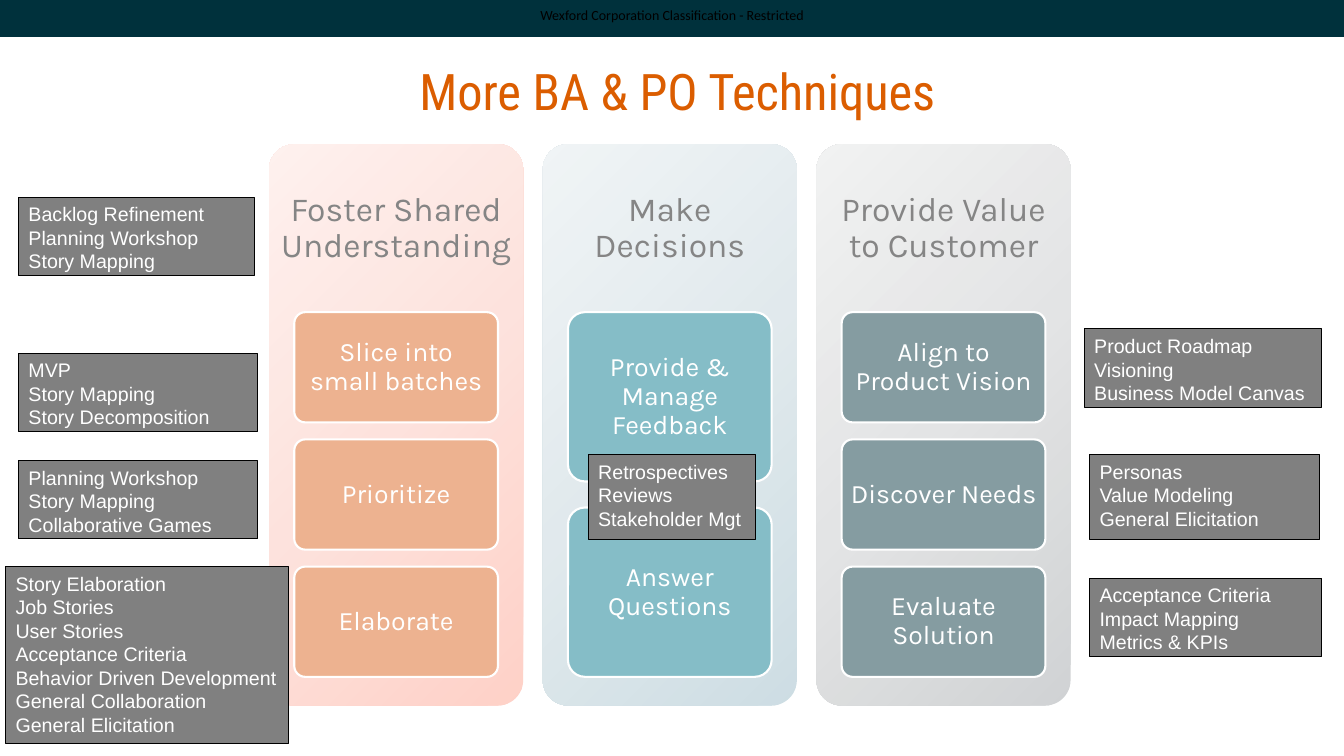
"""Build the slide on business analyst and product owner techniques."""
from copy import deepcopy

from pptx import Presentation
from pptx.dml.color import RGBColor
from pptx.enum.shapes import MSO_SHAPE as Shape
from pptx.enum.text import MSO_ANCHOR as Anchor, MSO_AUTO_SIZE as AutoSize, PP_ALIGN as Align
from pptx.oxml.ns import qn
from pptx.util import Pt
from lxml import etree

COLORS = {
    "navy": "00313C", "orange": "DB5D00", "white": "FFFFFF", "black": "000000", "gray": "808080",
    "card orange": "DB6018", "card teal": "00778B",
}


def add_box(kind, left, top, width, height, fill=None, line=None, line_width=0.75):
    """Add a flat shape of the given kind, with an optional fill and outline."""
    shape = slide.shapes.add_shape(kind, Pt(left), Pt(top), Pt(width), Pt(height))
    shape.shadow.inherit = False
    if fill:
        shape.fill.solid()
        shape.fill.fore_color.rgb = RGBColor.from_string(COLORS[fill])
    else:
        shape.fill.background()
    if line:
        shape.line.color.rgb = RGBColor.from_string(COLORS[line])
        shape.line.width = Pt(line_width)
    else:
        shape.line.fill.background()
    return shape


def write(shape, *lines, font, size, color="white", align=Align.CENTER,
          anchor=Anchor.MIDDLE, insets=(7.2, 7.2), spacing=None):
    """Fill a shape with one formatted paragraph per line."""
    frame = shape.text_frame
    frame.word_wrap = True
    frame.auto_size = AutoSize.NONE
    frame.vertical_anchor = anchor
    frame.margin_left = frame.margin_right = Pt(insets[0])
    frame.margin_top = frame.margin_bottom = Pt(insets[1])
    frame.text = "\n".join(lines)
    for paragraph in frame.paragraphs:
        paragraph.alignment = align
        paragraph.line_spacing = spacing
        paragraph.font.name = font
        paragraph.font.size = Pt(size)
        paragraph.font.color.rgb = RGBColor.from_string(COLORS[color])


presentation = Presentation()
presentation.slide_width, presentation.slide_height = Pt(960), Pt(540)
slide = presentation.slides.add_slide(presentation.slide_layouts[5])
slide.background.fill.solid()
slide.background.fill.fore_color.rgb = RGBColor.from_string(COLORS["navy"])

add_box(Shape.RECTANGLE, 0, 26.5, 960, 513.5, fill="white")
classification = slide.shapes.add_textbox(Pt(371.5), Pt(0), Pt(217), Pt(21))
write(classification, "Wexford Corporation Classification - Restricted",
      font="Calibri", size=10, color="black", insets=(0, 0))

title = slide.shapes.title
title.left, title.top, title.width, title.height = Pt(62), Pt(33), Pt(844), Pt(63.5)
write(title, "More BA & PO Techniques", font="Roboto Condensed", size=36, color="orange")
slide.shapes._spTree.append(title._element)

COLUMN_LEFT, COLUMN_STEP, COLUMN_WIDTH = 192.2, 195.5, 181.5
COLUMN_TOP, COLUMN_HEIGHT, HEADING_HEIGHT = 103, 401, 120
CARD_INDENT, CARDS_HEIGHT, GAP_RATIO = 18, 260.5, 0.154

columns = [
    ("Foster Shared Understanding", "card orange", ["FE9F8B", "FCC4B9", "FDE2DD"],
     ["Slice into small batches", "Prioritize", "Elaborate"]),
    ("Make Decisions", "card teal", ["97B9C6", "C1D3DA", "E1E9ED"],
     ["Provide & Manage Feedback", "Answer Questions"]),
    ("Provide Value to Customer", "navy", ["9EA3A6", "C5C7C9", "E3E4E4"],
     ["Align to Product Vision", "Discover Needs", "Evaluate Solution"]),
]
for index, (heading, card_color, shades, cards) in enumerate(columns):
    left = COLUMN_LEFT + index * COLUMN_STEP
    column = add_box(Shape.ROUNDED_RECTANGLE, left, COLUMN_TOP, COLUMN_WIDTH, COLUMN_HEIGHT)
    column.adjustments[0] = 0.1
    column.fill.gradient()
    column.fill.gradient_angle = 135
    stop_list = column._element.spPr.find(qn("a:gradFill")).find(qn("a:gsLst"))
    stop_list.insert(1, deepcopy(stop_list[0]))
    for stop, position, shade in zip(column.fill.gradient_stops, (0, 0.5, 1), shades):
        stop.position = position
        stop.color.rgb = RGBColor.from_string(shade)

    heading_box = slide.shapes.add_textbox(
        Pt(left), Pt(COLUMN_TOP), Pt(COLUMN_WIDTH), Pt(HEADING_HEIGHT))
    write(heading_box, heading, font="Karla", size=24, color="black", spacing=0.9)

    card_height = CARDS_HEIGHT / (len(cards) + GAP_RATIO * (len(cards) - 1))
    for row, text in enumerate(cards):
        card_top = COLUMN_TOP + HEADING_HEIGHT + row * card_height * (1 + GAP_RATIO)
        card = add_box(Shape.ROUNDED_RECTANGLE, left + CARD_INDENT, card_top,
                       COLUMN_WIDTH - 2 * CARD_INDENT, card_height,
                       fill=card_color, line="white", line_width=1.5)
        card.adjustments[0] = 0.1
        write(card, text, font="Karla", size=19, insets=(3.6, 2.9), spacing=0.9)

veil = add_box(Shape.RECTANGLE, 170.5, 90.5, 603.5, 425, fill="white")
veil_color = veil._element.spPr.find(qn("a:solidFill"))[0]
etree.SubElement(veil_color, qn("a:alpha")).set("val", "52000")

technique_boxes = [
    (420.2, 324.7, 119.5, 60.5, ["Retrospectives", "Reviews", "Stakeholder Mgt"]),
    (778.3, 413, 166, 56, ["Acceptance Criteria", "Impact Mapping", "Metrics & KPIs"]),
    (778.3, 324.7, 164.5, 60.5, ["Personas", "Value Modeling", "General Elicitation"]),
    (774.5, 235, 169.5, 56, ["Product Roadmap", "Visioning", "Business Model Canvas"]),
    (13.3, 141, 168.5, 56, ["Backlog Refinement", "Planning Workshop", "Story Mapping"]),
    (4, 404.7, 202.3, 126.5, ["Story Elaboration", "Job Stories", "User Stories",
                              "Acceptance Criteria", "Behavior Driven Development",
                              "General Collaboration", "General Elicitation"]),
    (13.3, 329, 170.7, 56, ["Planning Workshop", "Story Mapping", "Collaborative Games"]),
    (13.3, 252.4, 170.7, 56, ["MVP", "Story Mapping", "Story Decomposition"]),
]
for left, top, width, height, techniques in technique_boxes:
    box = add_box(Shape.RECTANGLE, left, top, width, height, fill="gray", line="black")
    write(box, *techniques, font="Arial", size=14, align=Align.LEFT,
          anchor=Anchor.TOP, insets=(7.2, 3.6))

presentation.save("out.pptx")
